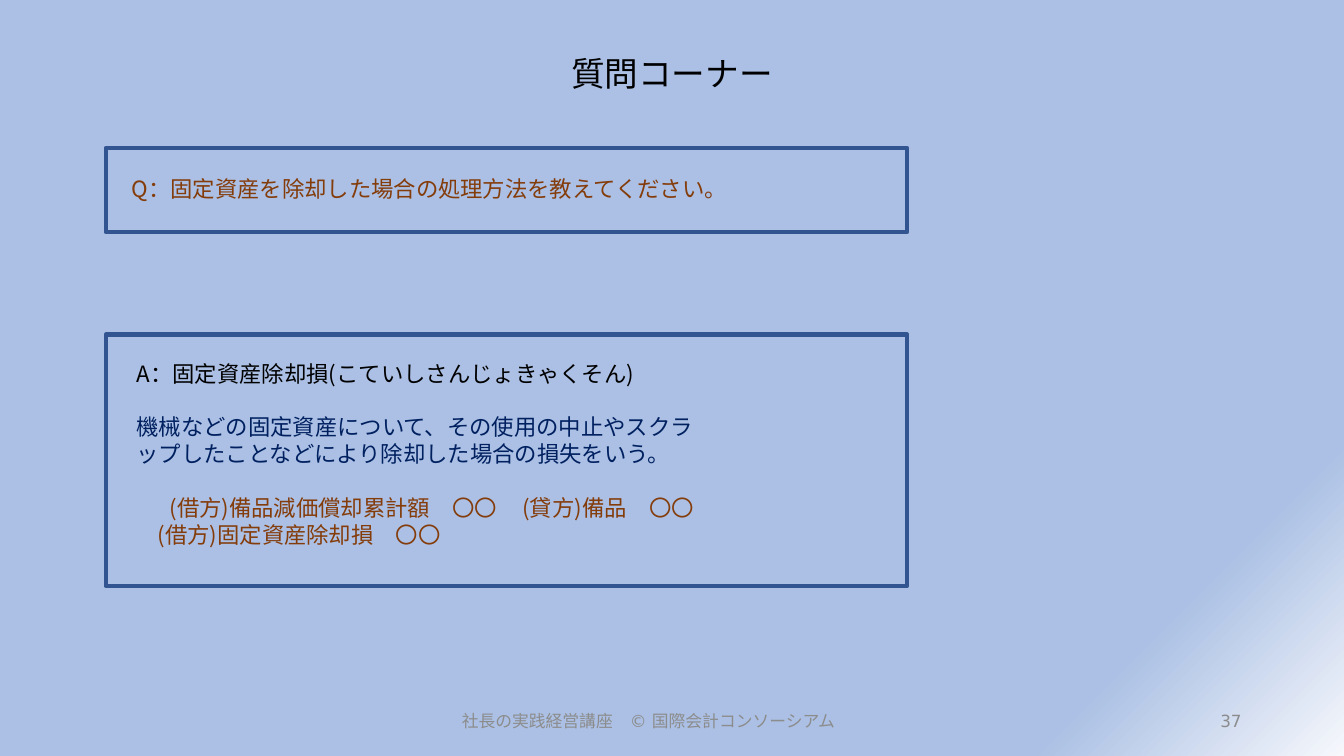
"""Build the question corner slide on discarding fixed assets."""
import pptx
import pptx.dml.color
import pptx.enum.shapes
import pptx.enum.text
import pptx.oxml
import pptx.oxml.ns
import pptx.util

Pt = pptx.util.Pt
Align = pptx.enum.text.PP_ALIGN
Anchor = pptx.enum.text.MSO_ANCHOR
CJK = "Noto Sans CJK JP"
BROWN = "843C0B"
NAVY = "002060"
GREY = "8C8C8C"


def color(code):
    return pptx.dml.color.RGBColor.from_string(code)


class Page:
    def __init__(self, slide):
        self.slide = slide
        self.edge = "325491"

    def back(self, stops, angle):
        fill = self.slide.background.fill
        fill.gradient()
        fill.gradient_angle = angle
        for stop, (place, code) in zip(fill.gradient_stops, stops):
            stop.position = place
            stop.color.rgb = color(code)

    def frame(self, *box):
        kind = pptx.enum.shapes.MSO_SHAPE.RECTANGLE
        rect = self.slide.shapes.add_shape(kind, *map(Pt, box))
        rect.shadow.inherit = False
        rect.fill.background()
        rect.line.color.rgb = color(self.edge)
        rect.line.width = Pt(3)

    def text(self, box, lines, size=16, face=CJK, anchor=Anchor.TOP, **form):
        body = self.slide.shapes.add_textbox(*map(Pt, box)).text_frame
        body.word_wrap = True
        body.vertical_anchor = anchor
        for i, (words, code, gap, left, tab) in enumerate(lines):
            para = body.paragraphs[0] if i == 0 else body.add_paragraph()
            if gap:
                para.space_before = Pt(gap)
            for name, value in form.items():
                setattr(para, name, value)
            self.indent(para, left, tab)
            run = para.add_run()
            run.text = words
            style = {"size": Pt(size), "name": face}
            for name, value in style.items():
                setattr(run.font, name, value)
            run.font.color.rgb = color(code)
            east = pptx.oxml.parse_xml(
                f'<a:ea {pptx.oxml.ns.nsdecls("a")} typeface="{CJK}"/>')
            run.font._element.append(east)

    def indent(self, para, left, tab):
        props = para._p.get_or_add_pPr()
        if left:
            props.set("marL", str(Pt(left)))
            props.set("indent", "0")
        if tab:
            props.append(pptx.oxml.parse_xml(
                f'<a:tabLst {pptx.oxml.ns.nsdecls("a")}>'
                f'<a:tab pos="{Pt(tab)}" algn="l"/></a:tabLst>'))


def line(words, code="000000", gap=0, left=0, tab=0):
    return words, code, gap, left, tab


def main():
    deck = pptx.Presentation()
    deck.slide_width, deck.slide_height = Pt(960), Pt(540)
    page = Page(deck.slides.add_slide(deck.slide_layouts[6]))
    page.back([(0, "F6F8FC"), (0.15, "ABC0E4")], 135)

    page.text((66, 24, 828, 60), [line("質問コーナー")], size=24,
              anchor=Anchor.MIDDLE, alignment=Align.CENTER, line_spacing=0.9)
    foot = {"size": 12, "face": "DejaVu Sans", "anchor": Anchor.MIDDLE}
    page.text((168.5, 500.5, 589.5, 28.75),
              [line("社長の実践経営講座　© 国際会計コンソーシアム", GREY)],
              alignment=Align.CENTER, **foot)
    page.text((678, 500.5, 216, 28.75), [line("37", GREY)],
              alignment=Align.RIGHT, **foot)

    page.text((87, 121.5, 561.5, 26.5),
              [line("Q：固定資産を除却した場合の処理方法を教えてください。", BROWN)])
    for top, high in ((105.75, 60), (239, 179.5)):
        page.frame(75.5, top, 572.5, high)
    page.text((90.5, 253.5, 527, 143.5), [
        line("A：固定資産除却損(こていしさんじょきゃくそん)"),
        line("機械などの固定資産について、その使用の中止やスクラ", NAVY, 19.2),
        line("ップしたことなどにより除却した場合の損失をいう。", NAVY),
        line("(借方)備品減価償却累計額　〇〇\t(貸方)備品　〇〇", BROWN, 19.2,
             23.5, 305),
        line("(借方)固定資産除却損　〇〇", BROWN, 0, 15),
    ])
    deck.save("out.pptx")


if __name__ == "__main__":
    main()
